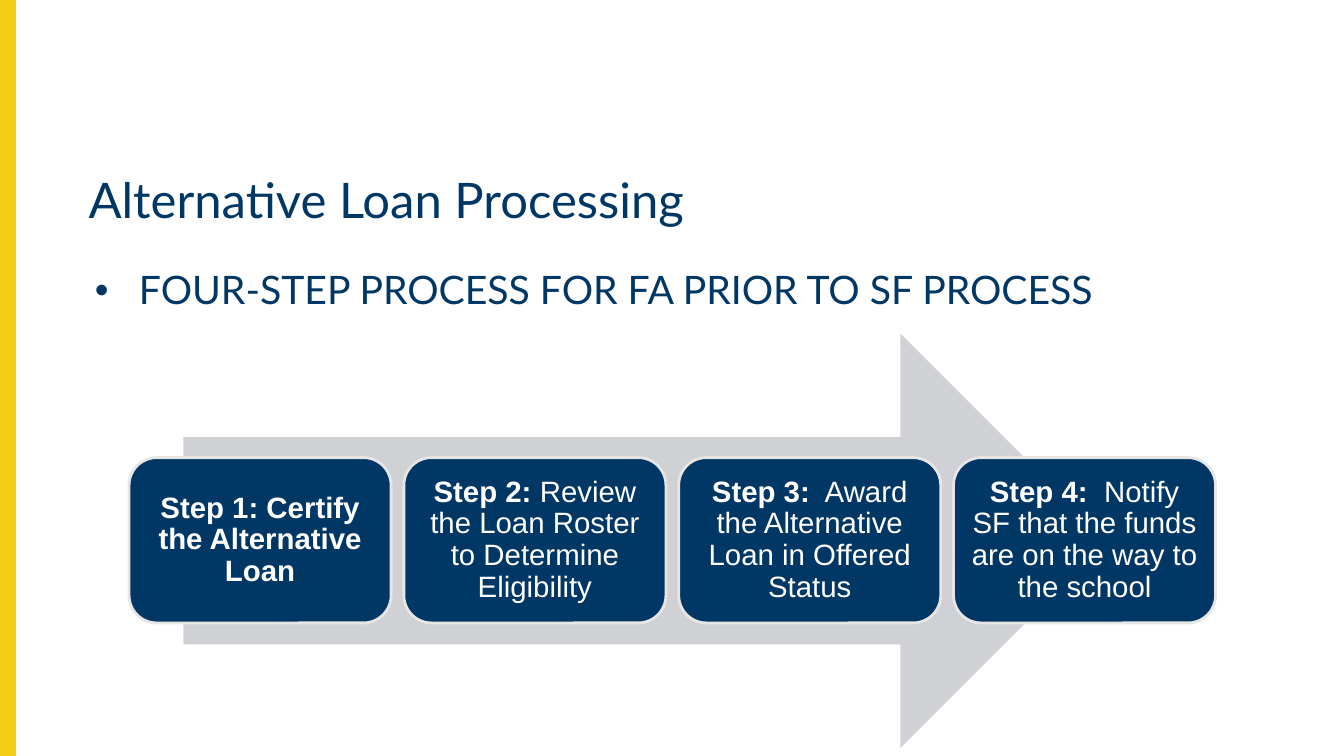
"""Build the Alternative Loan Processing slide."""
from dataclasses import dataclass

from lxml import etree
from pptx import Presentation
from pptx.dml.color import RGBColor
from pptx.enum import shapes, text
from pptx.oxml import ns
from pptx.util import Pt


@dataclass(frozen=True)
class Theme:
    """Colours, fonts and type sizes of the slide."""
    navy: str = "003764"
    gold: str = "F4CE12"
    grey: str = "CFD1D4"
    edge: str = "E7E6E6"
    white: str = "FFFFFF"
    heading_font: str = "Lato"
    step_font: str = "Arial"
    title_size: int = 35
    body_size: int = 28
    step_size: int = 21


THEME = Theme()

STEPS = [
    ("Step 1: Certify the Alternative Loan", ""),
    ("Step 2: ", "Review the Loan Roster to Determine Eligibility"),
    ("Step 3:", "  Award the Alternative Loan in Offered Status"),
    ("Step 4:", "  Notify SF that the funds are on the way to the school"),
]
STEP_LEFT, STEP_TOP, STEP_WIDTH, STEP_HEIGHT = 92.2, 326.9, 187.2, 118.1
STEP_PITCH = 196.3


def add_block(slide, kind, box, fill, edge=None, edge_width=1):
    """Add a filled preset shape, outlined when an edge colour is given."""
    block = slide.shapes.add_shape(kind, *map(Pt, box))
    block.shadow.inherit = False
    block.fill.solid()
    block.fill.fore_color.rgb = RGBColor.from_string(fill)
    if edge:
        block.line.color.rgb = RGBColor.from_string(edge)
        block.line.width = Pt(edge_width)
    else:
        block.line.fill.background()
    return block


def write(frame, runs, font, size, color, align=text.PP_ALIGN.LEFT,
          anchor=text.MSO_ANCHOR.TOP, margins=(7.2, 3.6), bullet=False):
    """Fill a frame with one paragraph of (wording, bold) runs."""
    frame.word_wrap = True
    frame.auto_size = text.MSO_AUTO_SIZE.NONE
    frame.vertical_anchor = anchor
    frame.margin_left = frame.margin_right = Pt(margins[0])
    frame.margin_top = frame.margin_bottom = Pt(margins[1])
    paragraph = frame.paragraphs[0]
    paragraph.alignment = align
    paragraph.line_spacing = 0.9
    if bullet:
        add_bullet(paragraph, color)
    for wording, bold in runs:
        run = paragraph.add_run()
        run.text = wording
        run.font.name = font
        run.font.size = Pt(size)
        run.font.bold = bold
        run.font.color.rgb = RGBColor.from_string(color)


def add_bullet(paragraph, color):
    """Give a paragraph a hanging round bullet."""
    properties = paragraph._p.get_or_add_pPr()
    properties.set("marL", str(Pt(36)))
    properties.set("indent", str(Pt(-31.5)))
    bullet_color = etree.SubElement(properties, ns.qn("a:buClr"))
    etree.SubElement(bullet_color, ns.qn("a:srgbClr"), val=color)
    etree.SubElement(properties, ns.qn("a:buFont"), typeface="Arial")
    etree.SubElement(properties, ns.qn("a:buChar"), char="•")


def add_heading(slide, wording, box, size, bullet=False):
    """Add a line of navy text in the heading font."""
    heading = slide.shapes.add_textbox(*map(Pt, box))
    write(heading.text_frame, [(wording, False)], THEME.heading_font, size,
          THEME.navy, bullet=bullet)


def add_step(slide, index, label, action):
    """Add one rounded step card at its place in the row."""
    box = (STEP_LEFT + index * STEP_PITCH, STEP_TOP, STEP_WIDTH, STEP_HEIGHT)
    card = add_block(slide, shapes.MSO_SHAPE.ROUNDED_RECTANGLE, box,
                     THEME.navy, THEME.edge, 2)
    runs = [(label, True)] + ([(action, False)] if action else [])
    write(card.text_frame, runs, THEME.step_font, THEME.step_size, THEME.white,
          align=text.PP_ALIGN.CENTER, anchor=text.MSO_ANCHOR.MIDDLE,
          margins=(6.5, 6.5))


def main():
    """Build and save the slide."""
    deck = Presentation()
    deck.slide_width, deck.slide_height = Pt(960), Pt(540)
    slide = deck.slides.add_slide(deck.slide_layouts[6])
    add_block(slide, shapes.MSO_SHAPE.RECTANGLE, (0, 0, 10.8, 540),
              THEME.gold, THEME.gold)
    add_heading(slide, "Alternative Loan Processing",
                (56.2, 122.4, 875.5, 62.6), THEME.title_size)
    add_heading(slide, "FOUR-STEP PROCESS FOR FA PRIOR TO SF PROCESS",
                (56.2, 190.1, 875.5, 295.9), THEME.body_size, bullet=True)
    add_block(slide, shapes.MSO_SHAPE.RIGHT_ARROW, (131, 238.3, 660.2, 295.9),
              THEME.grey)
    for index, (label, action) in enumerate(STEPS):
        add_step(slide, index, label, action)
    deck.save("out.pptx")


if __name__ == "__main__":
    main()
